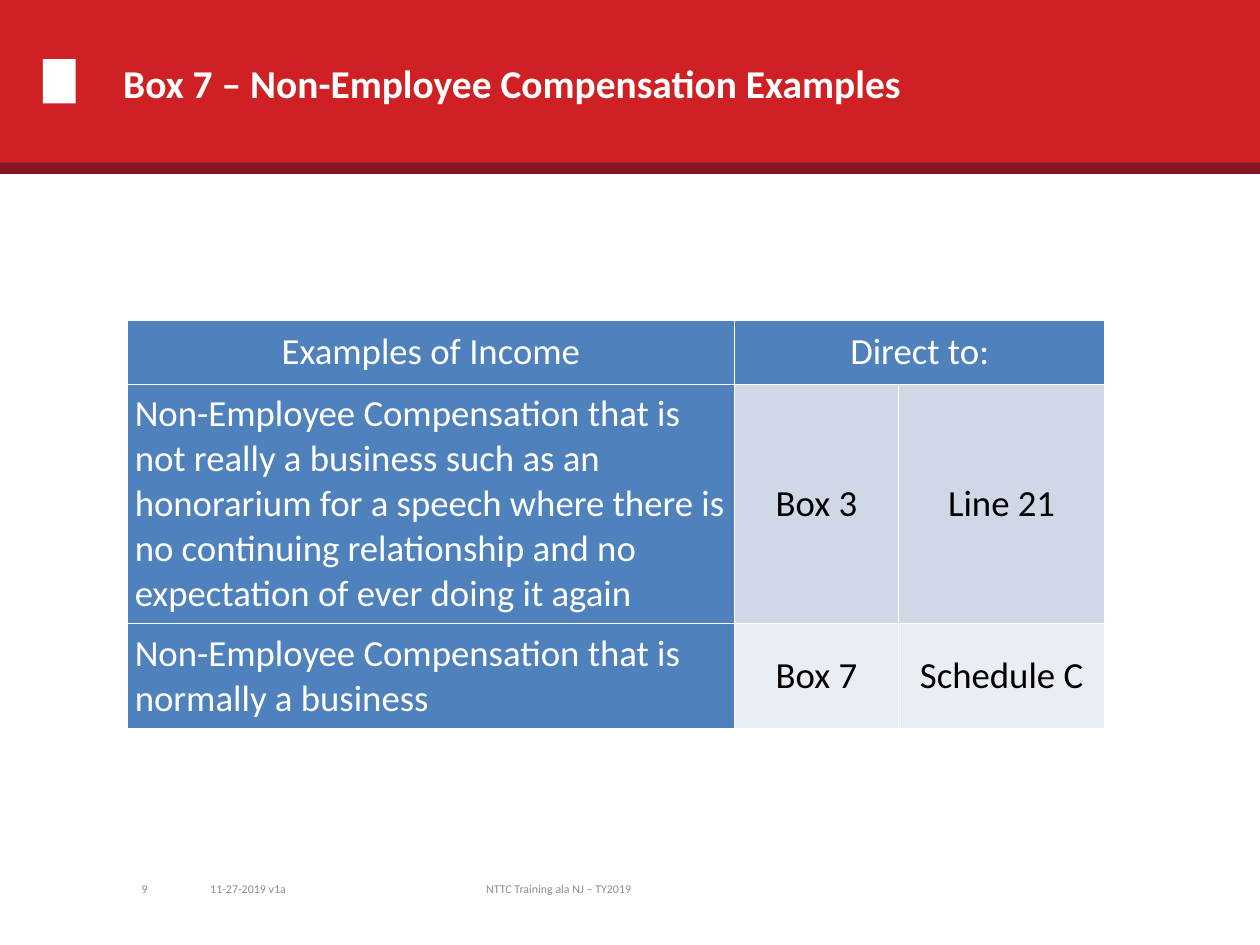
from lxml import etree
from pptx import Presentation
from pptx.dml.color import RGBColor
from pptx.enum.shapes import MSO_SHAPE
from pptx.enum.text import MSO_ANCHOR, PP_ALIGN
from pptx.oxml.ns import qn
from pptx.util import Inches, Pt

RECTANGLE = MSO_SHAPE.RECTANGLE
MIDDLE = MSO_ANCHOR.MIDDLE
LEFT, CENTER, RIGHT = PP_ALIGN.LEFT, PP_ALIGN.CENTER, PP_ALIGN.RIGHT

FONT = "Calibri"
COLORS = {
    "banner": "CF2124",
    "stripe": "841721",
    "white": "FFFFFF",
    "black": "000000",
    "footer": "8C8C8C",
    "header": "4F81BD",
    "dark_band": "D0D8E8",
    "light_band": "E9EDF4",
}
COLUMN_WIDTHS = [4.82, 1.3, 1.64]
ROW_HEIGHTS = [0.51, 1.9, 0.83]
TABLE_ROWS = [
    ["Examples of Income", "Direct to:", ""],
    [
        "Non-Employee Compensation that is not really a business such as an "
        "honorarium for a speech where there is no continuing relationship "
        "and no expectation of ever doing it again",
        "Box 3",
        "Line 21",
    ],
    ["Non-Employee Compensation that is normally a business", "Box 7", "Schedule C"],
]
BANDS = ["header", "dark_band", "light_band"]


def color(name):
    return RGBColor.from_string(COLORS[name])


def add_run(paragraph, text, size, color_name, bold=False):
    run = paragraph.add_run()
    run.text = text
    run.font.name = FONT
    run.font.size = Pt(size)
    run.font.bold = bold
    run.font.color.rgb = color(color_name)


def add_rectangle(slide, left, top, width, height, fill):
    shape = slide.shapes.add_shape(
        RECTANGLE, Inches(left), Inches(top), Inches(width), Inches(height)
    )
    shape.shadow.inherit = False
    shape.fill.solid()
    shape.fill.fore_color.rgb = color(fill)
    shape.line.fill.background()


def add_text(slide, left, top, width, height, text, size, color_name, alignment=LEFT, bold=False):
    shape = slide.shapes.add_textbox(Inches(left), Inches(top), Inches(width), Inches(height))
    frame = shape.text_frame
    frame.word_wrap = True
    frame.vertical_anchor = MIDDLE
    paragraph = frame.paragraphs[0]
    paragraph.alignment = alignment
    add_run(paragraph, text, size, color_name, bold)


def set_borders(cell):
    properties = cell._tc.get_or_add_tcPr()
    for position, side in enumerate(("a:lnL", "a:lnR", "a:lnT", "a:lnB")):
        line = etree.Element(qn(side), w=str(Pt(1)))
        fill = etree.SubElement(line, qn("a:solidFill"))
        etree.SubElement(fill, qn("a:srgbClr"), val=COLORS["white"])
        properties.insert(position, line)


def fill_cell(cell, text, fill, color_name, alignment):
    cell.fill.solid()
    cell.fill.fore_color.rgb = color(fill)
    cell.vertical_anchor = MIDDLE
    cell.margin_left = cell.margin_right = Inches(0.06)
    cell.margin_top = cell.margin_bottom = 0
    set_borders(cell)
    if text:
        paragraph = cell.text_frame.paragraphs[0]
        paragraph.alignment = alignment
        add_run(paragraph, text, 21, color_name)


def add_income_table(slide):
    table = slide.shapes.add_table(
        len(TABLE_ROWS), len(COLUMN_WIDTHS), Inches(1.01), Inches(2.54),
        Inches(sum(COLUMN_WIDTHS)), Inches(sum(ROW_HEIGHTS)),
    ).table
    for column, width in zip(table.columns, COLUMN_WIDTHS):
        column.width = Inches(width)
    for row, height in zip(table.rows, ROW_HEIGHTS):
        row.height = Inches(height)
    table.cell(0, 1).merge(table.cell(0, 2))
    for row_index, texts in enumerate(TABLE_ROWS):
        for column_index, text in enumerate(texts):
            is_heading = row_index == 0 or column_index == 0
            fill = "header" if is_heading else BANDS[row_index]
            text_color = "white" if is_heading else "black"
            alignment = LEFT if row_index and column_index == 0 else CENTER
            fill_cell(table.cell(row_index, column_index), text, fill, text_color, alignment)


def add_footer(slide):
    for left, width, text, alignment in (
        (0.5, 0.77, "9", RIGHT),
        (1.57, 1.09, "11-27-2019 v1a", LEFT),
        (2.85, 3.17, "NTTC Training ala NJ – TY2019", CENTER),
    ):
        add_text(slide, left, 6.85, width, 0.4, text, 6.8, "footer", alignment)


def main():
    presentation = Presentation()
    presentation.slide_width = Inches(10)
    presentation.slide_height = Inches(7.5)
    slide = presentation.slides.add_slide(presentation.slide_layouts[6])
    add_rectangle(slide, 0, -0.01, 10, 1.33, "banner")
    add_rectangle(slide, 0.34, 0.47, 0.26, 0.35, "white")
    add_rectangle(slide, 0, 1.29, 10, 0.09, "stripe")
    add_text(slide, 0.88, 0.03, 8, 1.25, "Box 7 – Non-Employee Compensation Examples",
             22.5, "white", bold=True)
    add_income_table(slide)
    add_footer(slide)
    presentation.save("out.pptx")


if __name__ == "__main__":
    main()
